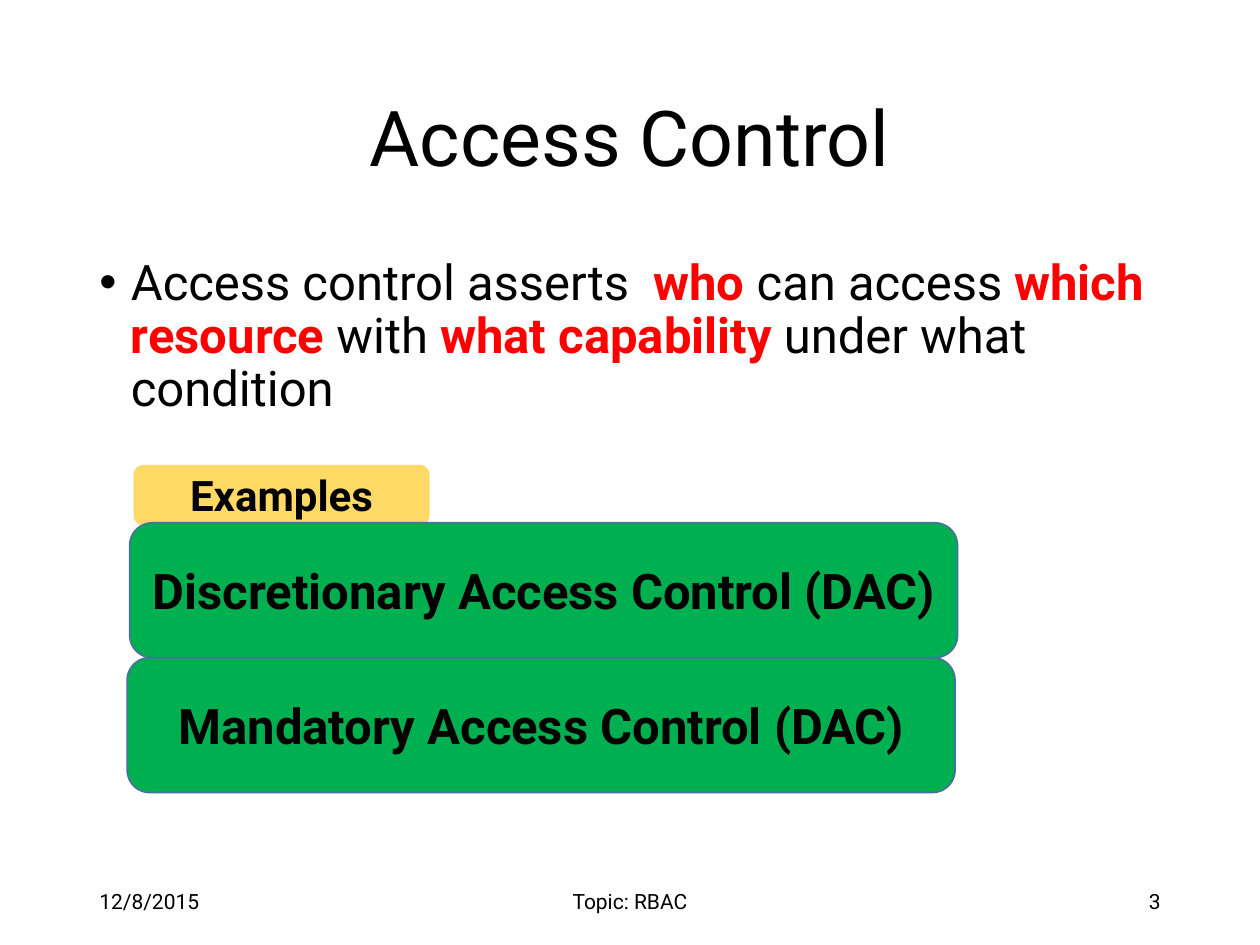
import lxml.etree
import pptx
import pptx.dml.color
import pptx.enum.shapes
import pptx.enum.text
import pptx.oxml.ns
import pptx.util

Inches = pptx.util.Inches
ALIGN = pptx.enum.text.PP_ALIGN
ANCHOR = pptx.enum.text.MSO_ANCHOR
FONT = "Roboto"
COLORS = {"text": "000000", "accent": "FF0000", "label": "FFD966",
          "model": "00B050", "outline": "43739E"}


def rgb(name):
    """Return the named colour."""
    return pptx.dml.color.RGBColor.from_string(COLORS[name])


def style_paragraph(paragraph, size, align=ALIGN.LEFT, bold=False):
    """Set the font and alignment of a whole paragraph."""
    paragraph.alignment = align
    paragraph.font.name = FONT
    paragraph.font.size = pptx.util.Pt(size)
    paragraph.font.bold = bold
    paragraph.font.color.rgb = rgb("text")


def fill_frame(frame, text, size, align, bold=False):
    """Write one vertically centred paragraph into a text frame."""
    frame.word_wrap = True
    frame.vertical_anchor = ANCHOR.MIDDLE
    frame.text = text
    style_paragraph(frame.paragraphs[0], size, align, bold)


def add_title(slide, left, top, width, height, text):
    """Place and format the title placeholder."""
    title = slide.shapes.title
    title.left, title.top = Inches(left), Inches(top)
    title.width, title.height = Inches(width), Inches(height)
    fill_frame(title.text_frame, text, 44, ALIGN.CENTER)
    title.text_frame.paragraphs[0].line_spacing = 0.9


def add_definition(slide, left, top, width, height, phrases):
    """Add a bulleted sentence whose key phrases are bold and coloured."""
    definition = slide.shapes.add_textbox(
        Inches(left), Inches(top), Inches(width), Inches(height))
    frame = definition.text_frame
    frame.word_wrap = True
    sentence = frame.paragraphs[0]
    style_paragraph(sentence, 28)
    sentence.line_spacing = 0.9
    sentence.space_before = pptx.util.Pt(10)
    for text, is_key in phrases:
        phrase = sentence.add_run()
        phrase.text = text
        phrase.font.name = FONT
        phrase.font.size = pptx.util.Pt(28)
        phrase.font.bold = is_key
        phrase.font.color.rgb = rgb("accent" if is_key else "text")
    properties = sentence._p.get_or_add_pPr()
    properties.set("marL", str(Inches(0.25)))
    properties.set("indent", str(Inches(-0.25)))
    bullet_font = lxml.etree.Element(pptx.oxml.ns.qn("a:buFont"), typeface="Arial")
    bullet = lxml.etree.Element(pptx.oxml.ns.qn("a:buChar"), char="•")
    defaults = properties.find(pptx.oxml.ns.qn("a:defRPr"))
    defaults.addprevious(bullet_font)
    defaults.addprevious(bullet)


def add_box(slide, left, top, width, height, text, size, fill, outline=None):
    """Add a rounded box with a bold centred caption."""
    box = slide.shapes.add_shape(
        pptx.enum.shapes.MSO_SHAPE.ROUNDED_RECTANGLE,
        Inches(left), Inches(top), Inches(width), Inches(height))
    box.shadow.inherit = False
    box.fill.solid()
    box.fill.fore_color.rgb = rgb(fill)
    if outline:
        box.line.color.rgb = rgb(outline)
        box.line.width = pptx.util.Pt(1)
    else:
        box.line.fill.background()
    fill_frame(box.text_frame, text, size, ALIGN.CENTER, bold=True)


def add_examples(slide, left, top, models):
    """Stack the label and the access control models, each a little further left."""
    add_box(slide, left + 0.05, top, 2.35, 0.48, "Examples", 24, "label")
    for row, model in enumerate(models):
        add_box(slide, left + 0.02 * (1 - row), top + 0.46 + 1.07 * row,
                6.57, 1.07, model, 28, "model", "outline")


def add_footer(slide, left, top, width, height, date, topic, number):
    """Add the date, topic and slide number across the given box."""
    side, middle = 2.25, 3.38
    parts = [
        (date, left, side, ALIGN.LEFT),
        (topic, left + (width - middle) / 2, middle, ALIGN.CENTER),
        (number, left + width - side, side, ALIGN.RIGHT),
    ]
    for text, part_left, part_width, align in parts:
        part = slide.shapes.add_textbox(
            Inches(part_left), Inches(top), Inches(part_width), Inches(height))
        fill_frame(part.text_frame, text, 12, align)


def main():
    """Build and save the slide."""
    deck = pptx.Presentation()
    deck.slide_width, deck.slide_height = Inches(10), Inches(7.5)
    slide = deck.slides.add_slide(deck.slide_layouts[5])
    margin, width = 0.69, 8.62
    add_title(slide, margin, 0.4, width, 1.45, "Access Control")
    add_definition(slide, margin, 2, width, 1.47, [
        ("Access control asserts  ", False),
        ("who", True),
        (" can access ", False),
        ("which resource", True),
        (" with ", False),
        ("what capability", True),
        (" under what condition", False),
    ])
    add_footer(slide, margin, 6.95, width, 0.4, "12/8/2015", "Topic: RBAC", "3")
    add_examples(slide, 1.01, 3.69, [
        "Discretionary Access Control (DAC)",
        "Mandatory Access Control (DAC)",
    ])
    deck.save("out.pptx")


if __name__ == "__main__":
    main()
